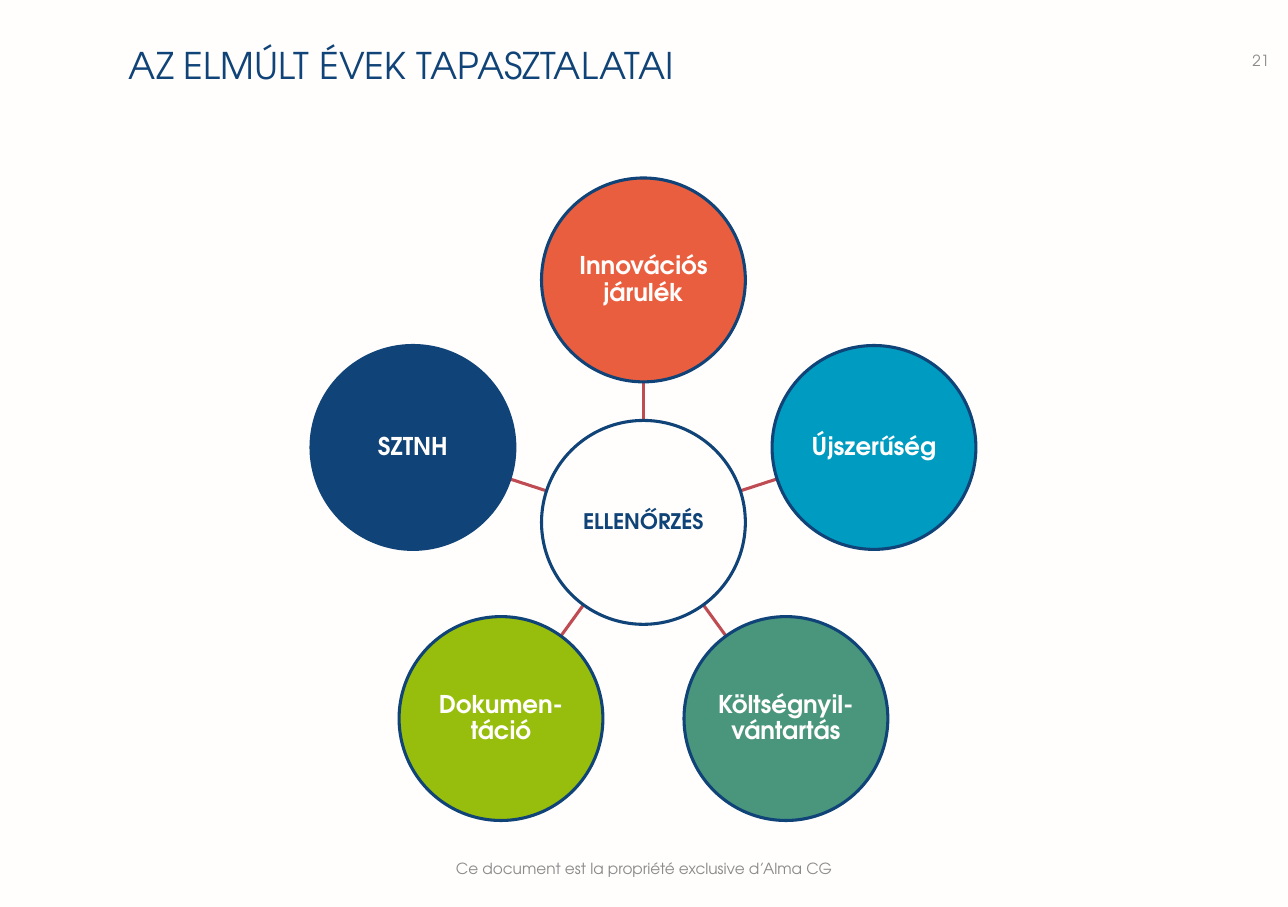
from math import cos, radians, sin

from lxml import etree
from pptx import Presentation
from pptx.dml.color import RGBColor
from pptx.enum.shapes import MSO_CONNECTOR, MSO_SHAPE
from pptx.enum.text import MSO_ANCHOR, PP_ALIGN
from pptx.oxml.ns import qn
from pptx.util import Inches, Pt

LEFT, CENTER, RIGHT = PP_ALIGN.LEFT, PP_ALIGN.CENTER, PP_ALIGN.RIGHT
TOP, MIDDLE = MSO_ANCHOR.TOP, MSO_ANCHOR.MIDDLE
OVAL, STRAIGHT = MSO_SHAPE.OVAL, MSO_CONNECTOR.STRAIGHT
FONT = "TeX Gyre Adventor"
NAVY, GREY, WHITE, RED = "104377", "8A8A8A", "FFFEFD", "BF4C53"


def color(code):
    return RGBColor.from_string(code)


def write(shape, text, size, ink, align=CENTER, anchor=MIDDLE, bold=False,
          pad=(0.11, 0.06), space=1.0):
    frame = shape.text_frame
    frame.word_wrap = True
    frame.vertical_anchor = anchor
    frame.margin_left = frame.margin_right = Inches(pad[0])
    frame.margin_top = frame.margin_bottom = Inches(pad[1])
    para = frame.paragraphs[0]
    para.alignment = align
    para.line_spacing = space
    run = para.add_run()
    run.text = text
    run.font.name = FONT
    run.font.size = Pt(size)
    run.font.bold = bold
    run.font.color.rgb = color(ink)


prs = Presentation()
prs.slide_width, prs.slide_height = Inches(11.69), Inches(8.23)
slide = prs.slides.add_slide(prs.slide_layouts[6])
slide.background.fill.solid()
slide.background.fill.fore_color.rgb = color(WHITE)
shapes = slide.shapes

# Title, footer and page number
labels = [
    ("AZ ELMÚLT ÉVEK TAPASZTALATAI", (1.06, 0.33, 7.92, 0.91), 24, NAVY, LEFT, TOP),
    ("Ce document est la propriété exclusive d’Alma CG",
     (3.23, 7.66, 5.23, 0.44), 10, GREY, CENTER, MIDDLE),
    ("21", (10.29, 0.33, 1.34, 0.44), 10, GREY, RIGHT, MIDDLE),
]
for text, place, size, ink, align, anchor in labels:
    box = shapes.add_textbox(*[Inches(n) for n in place])
    write(box, text, size, ink, align, anchor)

# Wheel: a hub, then five discs clockwise from the top
HUB_X, HUB_Y = 5.84, 4.74
DISC, REACH = 1.85, 2.2
RIM = DISC / 2
topics = [
    ("Innovációs járulék", "E95E3F"),
    ("Újszerűség", "009BC1"),
    ("Költségnyil-vántartás", "49967D"),
    ("Dokumen-táció", "97BE0C"),
    ("SZTNH", NAVY),
]
discs = [("ELLENŐRZÉS", None, 14, NAVY, HUB_X, HUB_Y)]
for i, (text, fill) in enumerate(topics):
    angle = radians(360 / len(topics) * i - 90)
    dx, dy = cos(angle), sin(angle)
    discs.append((text, fill, 16, WHITE, HUB_X + REACH * dx, HUB_Y + REACH * dy))

    # Spoke from the hub's rim to the disc's rim
    ends = [HUB_X + RIM * dx, HUB_Y + RIM * dy,
            HUB_X + (REACH - RIM) * dx, HUB_Y + (REACH - RIM) * dy]
    spoke = shapes.add_connector(STRAIGHT, *[Inches(n) for n in ends])
    spoke.line.color.rgb = color(RED)
    spoke.line.width = Pt(2)
    etree.SubElement(spoke._element.spPr, qn("a:effectLst"))

for text, fill, size, ink, x, y in discs:
    disc = shapes.add_shape(OVAL, Inches(x - RIM), Inches(y - RIM),
                            Inches(DISC), Inches(DISC))
    disc.shadow.inherit = False
    if fill:
        disc.fill.solid()
        disc.fill.fore_color.rgb = color(fill)
    else:
        disc.fill.background()
    disc.line.color.rgb = color(NAVY)
    disc.line.width = Pt(2)
    write(disc, text, size, ink, bold=True, pad=(0.01, 0.01), space=0.9)

prs.save("out.pptx")
